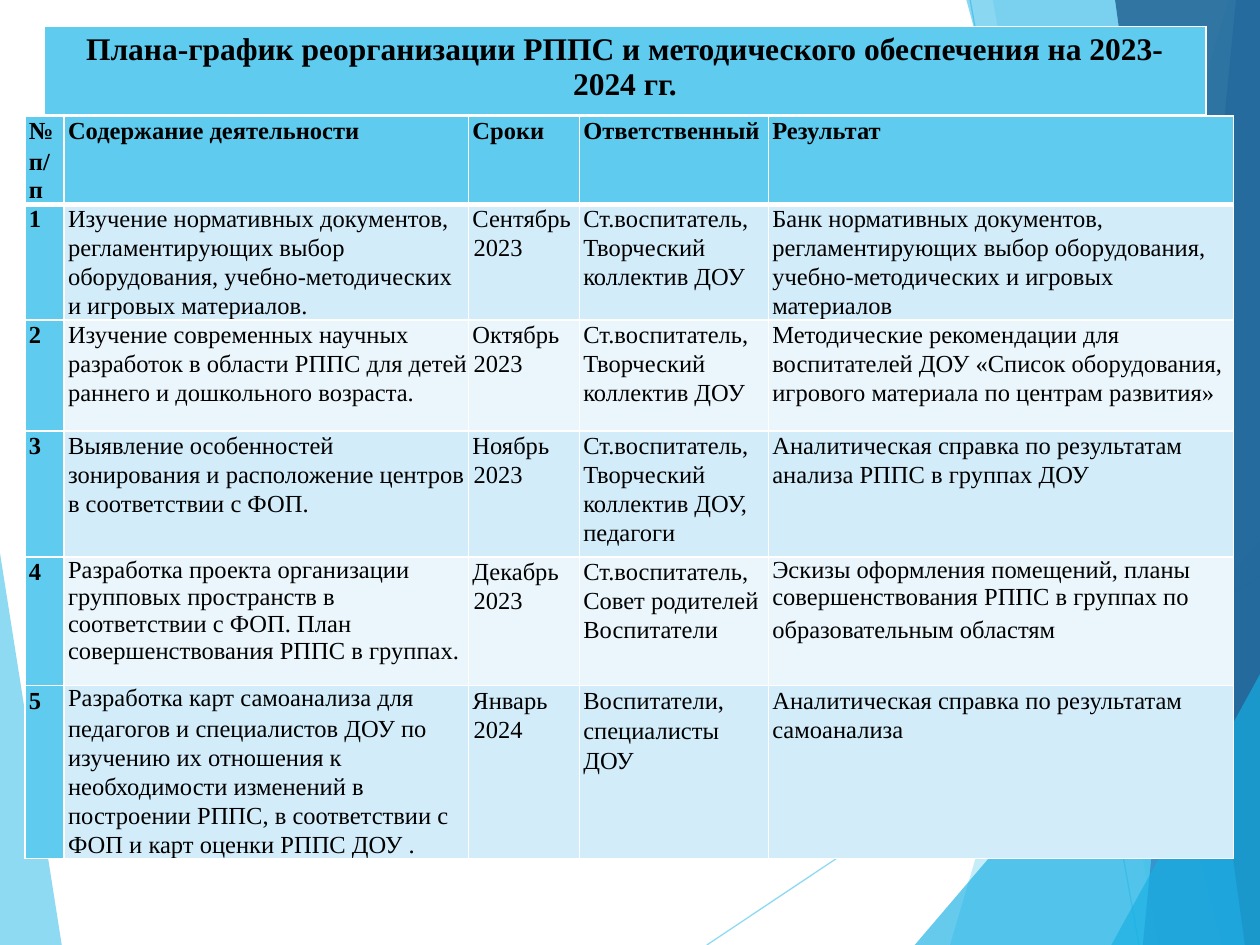
from lxml import etree
from pptx import Presentation
from pptx.dml.color import RGBColor
from pptx.enum.shapes import MSO_CONNECTOR
from pptx.enum.text import PP_ALIGN
from pptx.oxml.ns import qn
from pptx.util import Inches, Pt

CENTER, JUSTIFY = PP_ALIGN.CENTER, PP_ALIGN.JUSTIFY
STRAIGHT = MSO_CONNECTOR.STRAIGHT

THEME = {
    "font": "Times New Roman", "title_size": 18, "body_size": 14,
    "text": "000000", "border": "FFFFFF", "accent": "5FCBEF",
    "bands": ("D2ECF9", "EAF6FC"),
    "bright": "17B0E4", "blue": "2E83C3", "deep": "226292",
}
LOOSE, TIGHT = 1.07, 0.99  # line spacing
THIN, THICK = 1, 3         # border widths

TITLE = "Плана-график реорганизации РППС и методического обеспечения на 2023-2024 гг."
HEADER = ["№\nп/п", "Содержание деятельности", "Сроки", "Ответственный", "Результат"]
CREATIVE_TEAM = "Ст.воспитатель, Творческий коллектив ДОУ"
ACTIVITIES = [
    ("Изучение нормативных документов, регламентирующих выбор оборудования, "
     "учебно-методических и игровых материалов.",
     "Сентябрь 2023", CREATIVE_TEAM,
     "Банк нормативных документов, регламентирующих выбор оборудования, "
     "учебно-методических и игровых материалов"),
    ("Изучение современных научных разработок в области РППС для детей раннего "
     "и дошкольного возраста.",
     "Октябрь 2023", CREATIVE_TEAM,
     "Методические рекомендации для воспитателей ДОУ «Список оборудования, "
     "игрового материала по центрам развития»"),
    ("Выявление особенностей зонирования и расположение центров в соответствии с ФОП.",
     "Ноябрь 2023", CREATIVE_TEAM + ", педагоги",
     "Аналитическая справка по результатам анализа РППС в группах ДОУ"),
    ("Разработка проекта организации групповых пространств в соответствии с ФОП. "
     "План совершенствования РППС в группах.",
     "Декабрь 2023", "Ст.воспитатель, Совет родителей Воспитатели",
     "Эскизы оформления помещений, планы совершенствования РППС в группах по\n"
     "образовательным областям"),
    ("Разработка карт самоанализа для\n"
     "педагогов и специалистов ДОУ по изучению их отношения к необходимости "
     "изменений в построении РППС, в соответствии с ФОП и карт оценки РППС ДОУ .",
     "Январь 2024", "Воспитатели,\nспециалисты\nДОУ",
     "Аналитическая справка по результатам самоанализа"),
]
# Cells (row, column) whose first paragraph is set tighter: space after in points
TIGHT_CELLS = {(4, 1): 0.8, (4, 4): 2.3, (5, 1): 0.8}

COLUMN_WIDTHS = [0.31, 3.21, 0.88, 1.5, 3.69]
ROW_HEIGHTS = [0.3, 0.74, 0.88, 1, 1.02, 1.17]
PLAN_HEIGHT = 6.22

# Background facets: colour, opacity in percent, corners
LEFT_FACET = ("accent", 70, [(0, 4.39), (0.49, 7.5), (0, 7.5)])
RIGHT_FACETS = [
    ("accent", 36, [(9.75, 0), (7.54, 7.5), (10, 7.5), (10, 0)]),
    ("accent", 20, [(7.88, 0), (9.19, 7.5), (10, 7.5), (10, 0)]),
    ("bright", 66, [(7.26, 7.5), (10, 4.29), (10, 7.5)]),
    ("bright", 50, [(7.67, 0), (9.7, 7.5), (10, 7.5), (10, 0)]),
    ("blue", 70, [(9.81, 0), (9.07, 7.5), (10, 7.5), (10, 0)]),
    ("deep", 82, [(8.85, 0), (9.88, 7.5), (10, 7.5), (10, 0)]),
    ("bright", 66, [(8.82, 7.5), (10, 5.35), (10, 7.5)]),
]
RAYS = [((5.61, 7.5), (10, 4.57)), ((7.7, 0), (9.04, 7.5))]


def set_opacity(fill_parent, percent):
    color = next(fill_parent.iter(qn("a:srgbClr")))
    etree.SubElement(color, qn("a:alpha")).set("val", str(percent * 1000))


def add_facet(slide, color, opacity, corners):
    start, *rest = [(Inches(x), Inches(y)) for x, y in corners]
    builder = slide.shapes.build_freeform(*start)
    builder.add_line_segments(rest, close=True)
    facet = builder.convert_to_shape()
    facet.shadow.inherit = False
    facet.fill.solid()
    facet.fill.fore_color.rgb = RGBColor.from_string(THEME[color])
    facet.line.fill.background()
    set_opacity(facet._element.spPr, opacity)


def add_ray(slide, start, end):
    ray = slide.shapes.add_connector(STRAIGHT, *map(Inches, start + end))
    ray.line.width = Pt(0.75)
    ray.line.color.rgb = RGBColor.from_string(THEME["accent"])
    properties = ray._element.spPr
    set_opacity(properties, 70)
    etree.SubElement(properties, qn("a:effectLst"))


def add_grid(slide, left, top, widths, heights):
    frame = slide.shapes.add_table(
        len(heights), len(widths), Inches(left), Inches(top),
        Inches(sum(widths)), Inches(sum(heights)))
    grid = frame.table
    grid.first_row = grid.horz_banding = False
    for column, width in zip(grid.columns, widths):
        column.width = Inches(width)
    for row, height in zip(grid.rows, heights):
        row.height = Inches(height)
    return frame


def style_cell(cell, fill, top=THIN, bottom=THIN):
    properties = cell._tc.get_or_add_tcPr()
    for side, width in (("L", THIN), ("R", THIN), ("T", top), ("B", bottom)):
        border = etree.SubElement(properties, qn("a:ln" + side), w=str(Pt(width)))
        color = etree.SubElement(border, qn("a:solidFill"))
        etree.SubElement(color, qn("a:srgbClr"), val=THEME["border"])
    cell.fill.solid()
    cell.fill.fore_color.rgb = RGBColor.from_string(fill)


def add_text(paragraph, text, size, bold):
    run = paragraph.add_run()
    run.text = text
    run.font.name = THEME["font"]
    run.font.size = Pt(size)
    run.font.bold = bold
    run.font.color.rgb = RGBColor.from_string(THEME["text"])


def fill_plan_cell(cell, text, row, column):
    cell.margin_left, cell.margin_right = Inches(0.03), Inches(0.01)
    cell.margin_top = cell.margin_bottom = 0
    for index, line in enumerate(text.split("\n")):
        frame = cell.text_frame
        paragraph = frame.add_paragraph() if index else frame.paragraphs[0]
        tight = index == 0 and (row, column) in TIGHT_CELLS
        paragraph.line_spacing = TIGHT if tight else LOOSE
        paragraph.space_after = Pt(TIGHT_CELLS[row, column] if tight else 0.8)
        if row == 0 and column < 2 and index == 0:
            paragraph.alignment = JUSTIFY
        indents = paragraph._p.get_or_add_pPr()
        indents.set("marL", str(Inches(0.01 if column == 2 else 0)))
        indents.set("indent", str(Inches(-0.01)))
        add_text(paragraph, line, THEME["body_size"], row == 0 or column == 0)


def main():
    deck = Presentation()
    deck.slide_width, deck.slide_height = Inches(10), Inches(7.5)
    slide = deck.slides.add_slide(deck.slide_layouts[6])

    # Background
    add_facet(slide, *LEFT_FACET)
    for ray in RAYS:
        add_ray(slide, *ray)
    for facet in RIGHT_FACETS:
        add_facet(slide, *facet)

    # Title band
    title_cell = add_grid(slide, 0.35, 0.21, [9.22], [0.71]).table.cell(0, 0)
    style_cell(title_cell, THEME["accent"], bottom=THICK)
    heading = title_cell.text_frame.paragraphs[0]
    heading.alignment = CENTER
    add_text(heading, TITLE, THEME["title_size"], True)

    # Activity plan
    plan_frame = add_grid(slide, 0.2, 0.92, COLUMN_WIDTHS, ROW_HEIGHTS)
    plan_frame.height = Inches(PLAN_HEIGHT)
    plan = [HEADER] + [(str(n), *activity) for n, activity in enumerate(ACTIVITIES, 1)]
    for row, texts in enumerate(plan):
        for column, text in enumerate(texts):
            cell = plan_frame.table.cell(row, column)
            accented = row == 0 or column == 0
            fill = THEME["accent"] if accented else THEME["bands"][(row - 1) % 2]
            style_cell(cell, fill, top=THICK if row == 1 else THIN,
                       bottom=THICK if row == 0 else THIN)
            fill_plan_cell(cell, text, row, column)

    deck.save("out.pptx")


if __name__ == "__main__":
    main()
